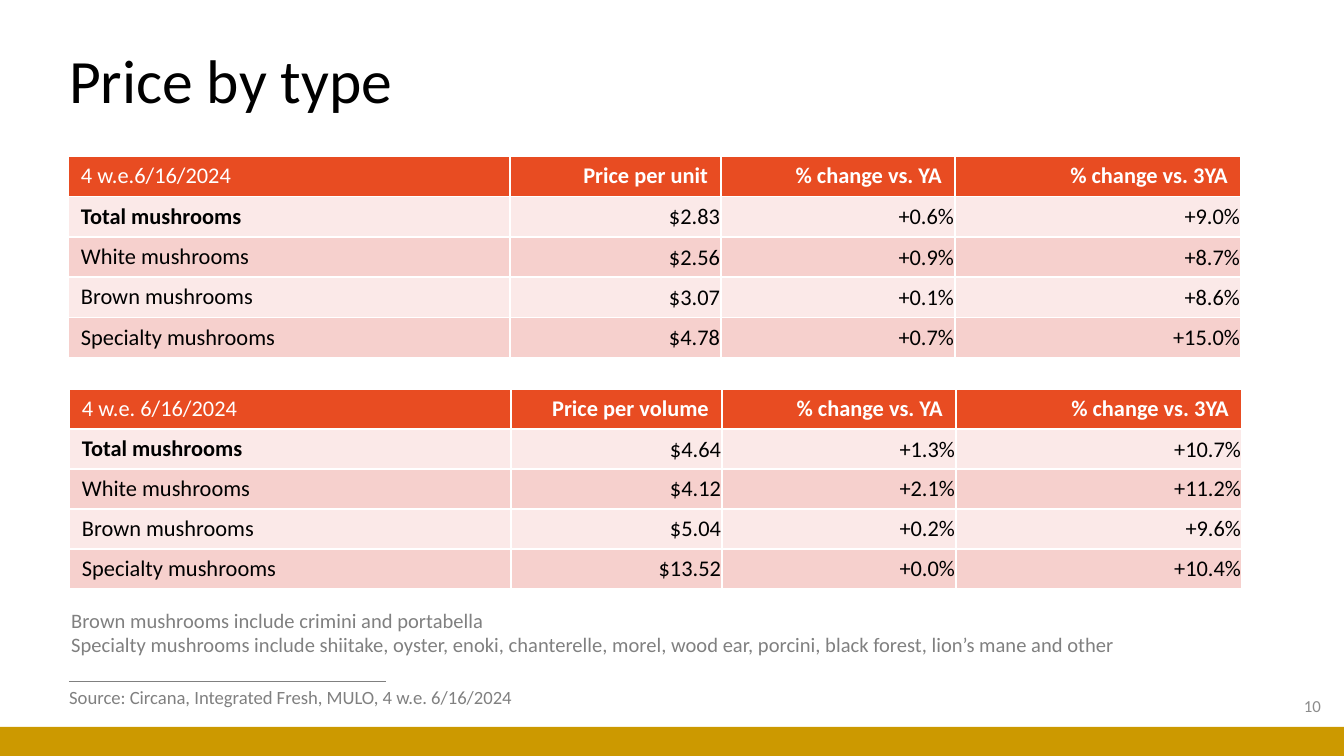
"""Build the mushroom price-by-type slide with two price tables."""
from dataclasses import dataclass

from lxml import etree
from pptx import Presentation
from pptx.dml.color import RGBColor
from pptx.enum.shapes import MSO_CONNECTOR, MSO_SHAPE
from pptx.enum.text import MSO_ANCHOR, MSO_AUTO_SIZE, PP_ALIGN
from pptx.oxml import parse_xml
from pptx.oxml.ns import nsdecls, qn
from pptx.util import Pt

LEFT, RIGHT = PP_ALIGN.LEFT, PP_ALIGN.RIGHT
TOP, MIDDLE = MSO_ANCHOR.TOP, MSO_ANCHOR.MIDDLE
FIT_SHAPE = MSO_AUTO_SIZE.SHAPE_TO_FIT_TEXT
RECTANGLE, STRAIGHT = MSO_SHAPE.RECTANGLE, MSO_CONNECTOR.STRAIGHT
PX = 914400 / 134.4


@dataclass(frozen=True)
class Theme:
    font: str = "Calibri"
    black: str = "000000"
    white: str = "FFFFFF"
    grey: str = "808080"
    number_grey: str = "8C8C8C"
    gold: str = "CC9900"
    header: str = "E84C22"
    bands: tuple = ("FBE9E8", "F6D0CD")
    title_size: int = 33
    table_size: int = 12
    note_size: int = 11
    source_size: int = 10
    number_size: int = 9


theme = Theme()


def px(*lengths):
    return [round(length * PX) for length in lengths]


def write(frame, text, size, color, align=LEFT, bold=False):
    frame.text = text
    for para in frame.paragraphs:
        para.alignment = align
        for span in para.runs:
            span.font.name = theme.font
            span.font.size = Pt(size)
            span.font.bold = bold
            span.font.color.rgb = RGBColor.from_string(color)


deck = Presentation()
deck.slide_width, deck.slide_height = px(1344, 756)
page = deck.slides.add_slide(deck.slide_layouts[6])
page.background.fill.solid()
page.background.fill.fore_color.rgb = RGBColor.from_string(theme.white)

footer_bar = page.shapes.add_shape(RECTANGLE, *px(0, 727, 1344, 29))
footer_bar.shadow.inherit = False
footer_bar.fill.solid()
footer_bar.fill.fore_color.rgb = RGBColor.from_string(theme.gold)
footer_bar.line.fill.background()

notes = (
    "Brown mushrooms include crimini and portabella\n"
    "Specialty mushrooms include shiitake, oyster, enoki, chanterelle, morel, "
    "wood ear, porcini, black forest, lion’s mane and other"
)
source = "Source: Circana, Integrated Fresh, MULO, 4 w.e. 6/16/2024"
texts = [
    ("Price by type", (56, 7, 1159, 153), theme.title_size, theme.black, LEFT, MIDDLE, True),
    ("10", (1032, 685, 302, 41), theme.number_size, theme.number_grey, RIGHT, MIDDLE, True),
    (source, (56, 679, 491, 36), theme.source_size, theme.grey, LEFT, TOP, False),
    (notes, (58, 601, 1074, 63), theme.note_size, theme.grey, LEFT, TOP, False),
]
for text, place, size, color, align, anchor, wrap in texts:
    box = page.shapes.add_textbox(*px(*place))
    frame = box.text_frame
    write(frame, text, size, color, align)
    frame.word_wrap = wrap
    frame.vertical_anchor = anchor
    if not wrap:
        frame.auto_size = FIT_SHAPE
    if size == theme.title_size:
        frame.paragraphs[0].line_spacing = 0.9

source_rule = page.shapes.add_connector(STRAIGHT, *px(69, 682, 386, 682))
source_rule.line.color.rgb = RGBColor.from_string(theme.grey)
source_rule.line.width = Pt(0.5)
etree.SubElement(source_rule._element.spPr, qn("a:effectLst"))

types = ["Total", "White", "Brown", "Specialty"]
column_widths = px(442, 211, 234, 286)
price_tables = [
    ((68, 156, 1173, 202), "4 w.e.6/16/2024", "Price per unit", [
        ("$2.83", "+0.6%", "+9.0%"),
        ("$2.56", "+0.9%", "+8.7%"),
        ("$3.07", "+0.1%", "+8.6%"),
        ("$4.78", "+0.7%", "+15.0%"),
    ]),
    ((69, 389, 1173, 200), "4 w.e. 6/16/2024", "Price per volume", [
        ("$4.64", "+1.3%", "+10.7%"),
        ("$4.12", "+2.1%", "+11.2%"),
        ("$5.04", "+0.2%", "+9.6%"),
        ("$13.52", "+0.0%", "+10.4%"),
    ]),
]
for place, period, measure, values in price_tables:
    rows = [(period, measure, "% change vs. YA", "% change vs. 3YA")]
    rows += [(f"{kind} mushrooms", *numbers) for kind, numbers in zip(types, values)]
    table = page.shapes.add_table(len(rows), len(column_widths), *px(*place)).table
    for column, width in zip(table.columns, column_widths):
        column.width = width
    for r, row in enumerate(rows):
        for c, text in enumerate(row):
            cell = table.cell(r, c)
            is_header, is_label = r == 0, c == 0
            color = theme.white if is_header else theme.black
            bold = is_header != is_label if r < 2 else False
            write(cell.text_frame, text, theme.table_size, color, LEFT if is_label else RIGHT, bold)
            cell.vertical_anchor = TOP if is_header else MIDDLE
            margins = px(13, 13, 6, 6) if is_header or is_label else px(1, 1, 1, 0)
            cell.margin_left, cell.margin_right, cell.margin_top, cell.margin_bottom = margins
            properties = cell._tc.get_or_add_tcPr()
            for side in ("lnL", "lnR", "lnT", "lnB"):
                properties.append(parse_xml(
                    f'<a:{side} {nsdecls("a")} w="{Pt(1)}"><a:solidFill>'
                    f'<a:srgbClr val="{theme.white}"/></a:solidFill></a:{side}>'
                ))
            cell.fill.solid()
            fill_color = theme.header if is_header else theme.bands[(r - 1) % 2]
            cell.fill.fore_color.rgb = RGBColor.from_string(fill_color)

deck.save("out.pptx")
